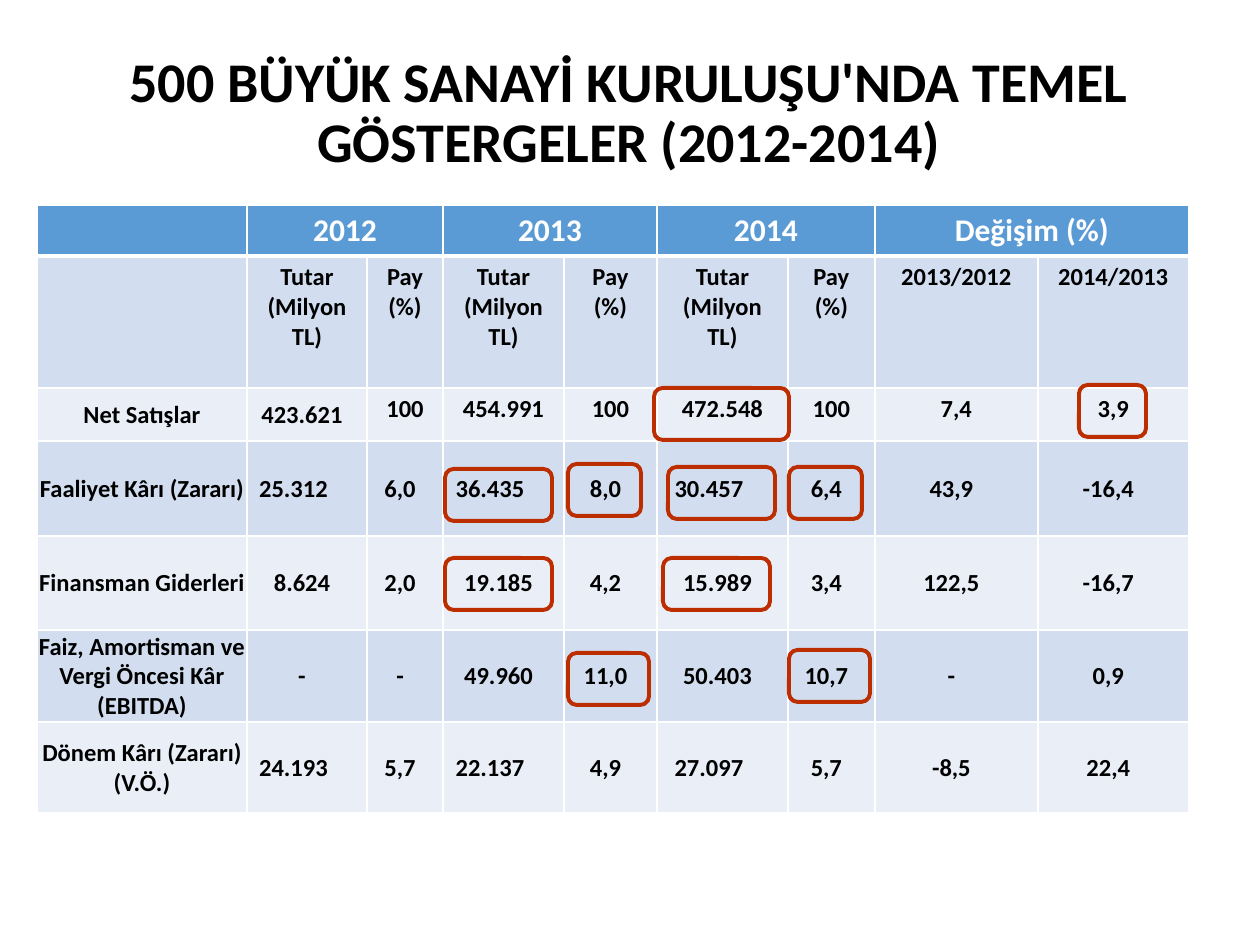
import dataclasses

import pptx
import pptx.dml.color
import pptx.enum.shapes
import pptx.enum.text
import pptx.oxml
import pptx.oxml.ns
import pptx.util

UNIT = 914400 / 126
FONT = "Calibri"
HUES = {
    "ink": "000000",
    "white": "FFFFFF",
    "head": "5B9BD5",
    "dark": "D2DEEF",
    "light": "EAEFF7",
    "ring": "BC2D00",
}
TOP = pptx.enum.text.MSO_ANCHOR.TOP
MID = pptx.enum.text.MSO_ANCHOR.MIDDLE

# Table content
LEFT, UPPER = 37, 205
COLS = [210, 120, 76, 121, 93, 131, 87, 163, 151]
ROWS = [51, 132, 53, 95, 94, 92, 91]
SUM, PART = "Tutar\n(Milyon TL)", "Pay (%)"
DATA = [
    ["", "2012", "", "2013", "", "2014", "", "Değişim (%)", ""],
    ["", SUM, PART, SUM, PART, SUM, PART, "2013/2012", "2014/2013"],
    ["Net Satışlar", "423.621", "100", "454.991", "100", "472.548", "100",
     "7,4", "3,9"],
    ["Faaliyet Kârı (Zararı)", "25.312", "6,0", "36.435", "8,0", "30.457",
     "6,4", "43,9", "-16,4"],
    ["Finansman Giderleri", "8.624", "2,0", "19.185", "4,2", "15.989", "3,4",
     "122,5", "-16,7"],
    ["Faiz, Amortisman ve Vergi Öncesi Kâr (EBITDA)", "-", "-", "49.960",
     "11,0", "50.403", "10,7", "-", "0,9"],
    ["Dönem Kârı (Zararı) (V.Ö.)", "24.193", "5,7", "22.137", "4,9", "27.097",
     "5,7", "-8,5", "22,4"],
]
SUMS = (1, 3, 5)      # columns holding amounts
PROFIT = (3, 6)       # rows whose amounts sit further left


@dataclasses.dataclass
class Ring:
    left: int
    top: int
    width: int
    height: int = 52


RINGS = [
    Ring(1079, 385, 67), Ring(654, 388, 135),
    Ring(568, 464, 73), Ring(789, 467, 73),
    Ring(445, 469, 107), Ring(668, 467, 107),
    Ring(445, 558, 107), Ring(663, 558, 107),
    Ring(568, 653, 81), Ring(789, 650, 81),
]


def px(num: int) -> int:
    return round(num * UNIT)


def color(name: str) -> pptx.dml.color.RGBColor:
    return pptx.dml.color.RGBColor.from_string(HUES[name])


def write(frame, text: str, *, size: int, hue: str = "ink",
          space: float = 1.0) -> None:
    """Fill a text frame with bold, centred paragraphs."""
    frame.word_wrap = True
    for num, line in enumerate(text.split("\n")):
        para = frame.add_paragraph() if num else frame.paragraphs[0]
        para.alignment = pptx.enum.text.PP_ALIGN.CENTER
        para.line_spacing = space
        run = para.add_run()
        run.text = line
        run.font.name = FONT
        run.font.size = pptx.util.Pt(size)
        run.font.bold = True
        run.font.color.rgb = color(hue)


def edge(cell, side: str, width: float) -> None:
    """Add one white border; call in the order L, R, T, B."""
    props = cell._tc.get_or_add_tcPr()
    space = pptx.oxml.ns.nsdecls("a")
    props.append(pptx.oxml.parse_xml(
        f'<a:ln{side} {space} w="{pptx.util.Pt(width)}"><a:solidFill>'
        f'<a:srgbClr val="{HUES["white"]}"/></a:solidFill></a:ln{side}>'))


def inset(cell, row: int, col: int) -> None:
    """Set the anchor and margins of a body cell."""
    if row < 2 or (row == 2 and col > 1):
        cell.vertical_anchor = TOP
        return
    cell.vertical_anchor = MID
    right = 1 if col == 0 else 11
    if row in PROFIT and col in SUMS:
        right = 28
    cell.margin_left = cell.margin_top = px(1)
    cell.margin_right = px(right)
    cell.margin_bottom = 0


def grid(slide: pptx.slide.Slide) -> None:
    table = slide.shapes.add_table(
        len(ROWS), len(COLS), px(LEFT), px(UPPER),
        px(sum(COLS)), px(sum(ROWS))).table
    table.first_row = table.horz_banding = False
    for col, width in zip(table.columns, COLS):
        col.width = px(width)
    for row, height in zip(table.rows, ROWS):
        row.height = px(height)
    for first in range(1, len(COLS), 2):
        table.cell(0, first).merge(table.cell(0, first + 1))

    for row, line in enumerate(DATA):
        fill = "head" if row == 0 else "dark" if row % 2 else "light"
        for col, text in enumerate(line):
            cell = table.cell(row, col)
            edge(cell, "L", 1)
            edge(cell, "R", 1)
            edge(cell, "T", 3 if row == 1 else 1)
            edge(cell, "B", 3 if row == 0 else 1)
            cell.fill.solid()
            cell.fill.fore_color.rgb = color(fill)
            inset(cell, row, col)
            if text:
                write(cell.text_frame, text, size=14 if row else 18,
                      hue="ink" if row else "white")


def circle(slide: pptx.slide.Slide, ring: Ring) -> None:
    shape = slide.shapes.add_shape(
        pptx.enum.shapes.MSO_SHAPE.ROUNDED_RECTANGLE,
        px(ring.left), px(ring.top), px(ring.width), px(ring.height))
    shape.shadow.inherit = False
    shape.fill.background()
    shape.line.color.rgb = color("ring")
    shape.line.width = pptx.util.Pt(2.25)


def main() -> None:
    deck = pptx.Presentation()
    deck.slide_width, deck.slide_height = px(1260), px(945)
    slide = deck.slides.add_slide(deck.slide_layouts[6])

    # Title
    box = slide.shapes.add_textbox(px(86), px(23), px(1086), px(183))
    box.text_frame.vertical_anchor = MID
    write(box.text_frame,
          "500 BÜYÜK SANAYİ KURULUŞU'NDA TEMEL GÖSTERGELER (2012-2014)",
          size=32, space=0.9)

    # Table, then the rings marking key figures
    grid(slide)
    for ring in RINGS:
        circle(slide, ring)

    deck.save("out.pptx")


if __name__ == "__main__":
    main()
